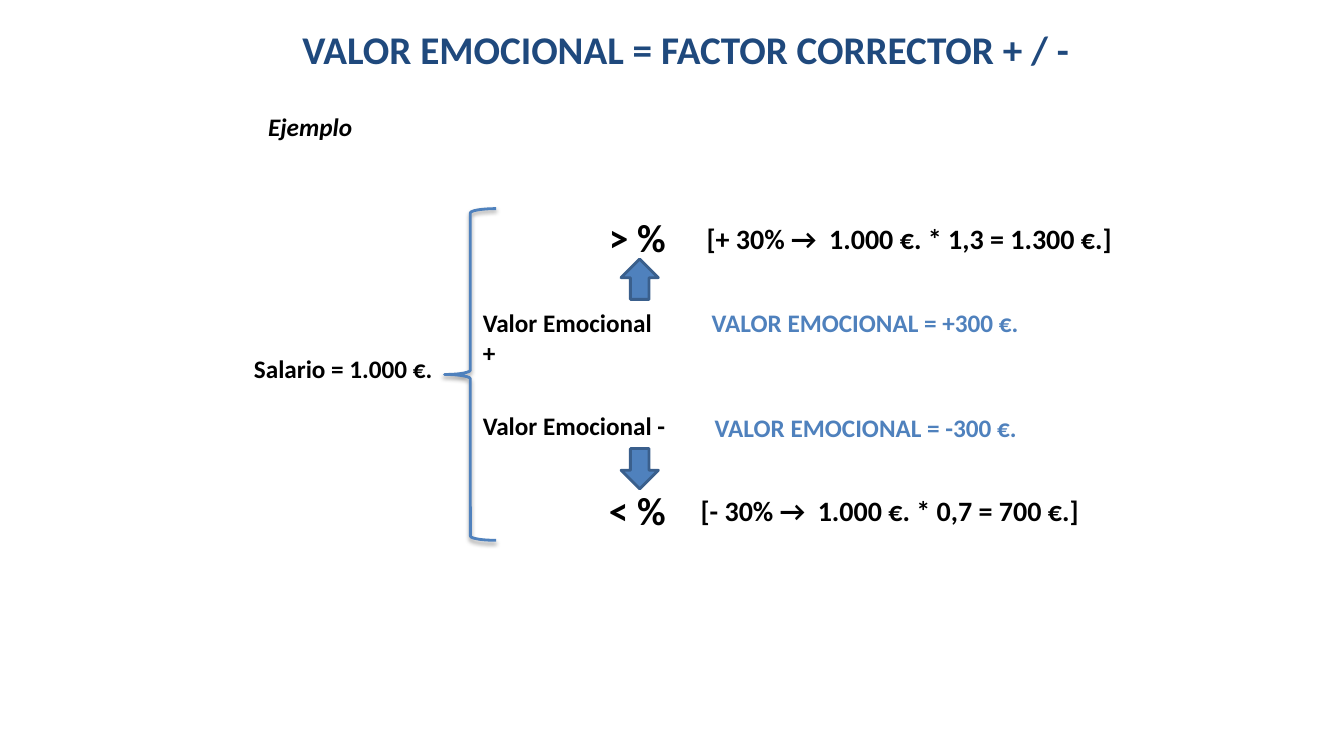
from dataclasses import dataclass

from lxml import etree
from pptx import Presentation
from pptx.dml.color import RGBColor
from pptx.enum.shapes import MSO_SHAPE
from pptx.enum.text import MSO_AUTO_SIZE
from pptx.oxml.ns import qn
from pptx.util import Inches, Pt

BRACE = MSO_SHAPE.LEFT_BRACE
ARROW = MSO_SHAPE.UP_ARROW
GROW = MSO_AUTO_SIZE.SHAPE_TO_FIT_TEXT


@dataclass(frozen=True)
class Theme:
    font: str = "Calibri"
    navy: str = "1F497D"
    black: str = "000000"
    blue: str = "4F81BD"
    edge: str = "3A5F8C"
    large: int = 28
    medium: int = 20
    small: int = 18
    line: int = 2


THEME = Theme()


def rgb(code):
    return RGBColor.from_string(code)


def add_text(slide, box, text, size=THEME.small, color=THEME.black, slant=None):
    shape = slide.shapes.add_textbox(*map(Inches, box))
    frame = shape.text_frame
    frame.word_wrap = False
    frame.auto_size = GROW
    para = frame.paragraphs[0]
    para.text = text
    font = para.font
    font.name = THEME.font
    font.size = Pt(size)
    font.bold = True
    font.italic = slant
    font.color.rgb = rgb(color)


def add_shape(slide, kind, box, edge):
    shape = slide.shapes.add_shape(kind, *map(Inches, box))
    shape.line.color.rgb = rgb(edge)
    shape.line.width = Pt(THEME.line)
    shape.shadow.inherit = False
    return shape


def add_head(slide, box):
    left, top, width, height = box
    add_text(slide, (left + 0.48, top, width - 0.48, 0.57),
             "VALOR EMOCIONAL = FACTOR CORRECTOR + / -", THEME.large, THEME.navy)
    add_text(slide, (left + 0.14, top + 0.86, 1.05, 0.4), "Ejemplo", slant=True)


def add_salary(slide, box):
    left, top, width, height = box
    add_text(slide, (left, top + 1.39, 1.99, 0.4), "Salario = 1.000 €.")
    brace = add_shape(slide, BRACE, (left + 1.99, top, width - 1.99, height), THEME.blue)
    brace.fill.background()
    effects = brace.element.spPr.find(qn("a:effectLst"))
    shade = etree.SubElement(effects, qn("a:outerShdw"), blurRad=str(Pt(3.1)),
                             dist=str(Pt(1.6)), dir="5400000", rotWithShape="0")
    color = etree.SubElement(shade, qn("a:srgbClr"), val=THEME.black)
    etree.SubElement(color, qn("a:alpha"), val="38000")


def add_branch(slide, box, words, rows, turn, shift):
    left, top, width, height = box
    mark, label, sum_text, value = words
    mark_y, arrow_y, label_y, sum_y, value_y = (top + row for row in rows)
    sum_x, value_x = left + shift[0], left + shift[1]
    add_text(slide, (left + 1.25, mark_y, 0.77, 0.57), mark, THEME.large)
    add_text(slide, (left, label_y, 2.05, 0.4), label)
    arrow = add_shape(slide, ARROW, (left + 1.47, arrow_y, 0.37, 0.4), THEME.edge)
    arrow.fill.solid()
    arrow.fill.fore_color.rgb = rgb(THEME.blue)
    arrow.rotation = turn
    add_text(slide, (sum_x, sum_y, left + width - sum_x, 0.44), sum_text, THEME.medium)
    add_text(slide, (value_x, value_y, 3.25, 0.4), value, color=THEME.blue)


def main():
    deck = Presentation()
    deck.slide_width = Inches(13.33)
    deck.slide_height = Inches(7.5)
    slide = deck.slides.add_slide(deck.slide_layouts[6])
    add_head(slide, (2.42, 0.2, 8.38, 1.26))
    add_salary(slide, (2.42, 2.07, 2.5, 3.29))
    add_branch(slide, (4.69, 2.07, 6.48, 1.33),
               ("> %", "Valor Emocional +", "[+ 30% →  1.000 €. * 1,3 = 1.300 €.]",
                "VALOR EMOCIONAL = +300 €."),
               (0, 0.5, 0.93, 0.08, 0.93), 0, (2.22, 2.27))
    add_branch(slide, (4.69, 4.02, 6.15, 1.33),
               ("< %", "Valor Emocional -", "[- 30% →  1.000 €. * 0,7 = 700 €.]",
                "VALOR EMOCIONAL = -300 €."),
               (0.76, 0.43, 0, 0.83, 0.02), 180, (2.16, 2.3))
    deck.save("out.pptx")


if __name__ == "__main__":
    main()
